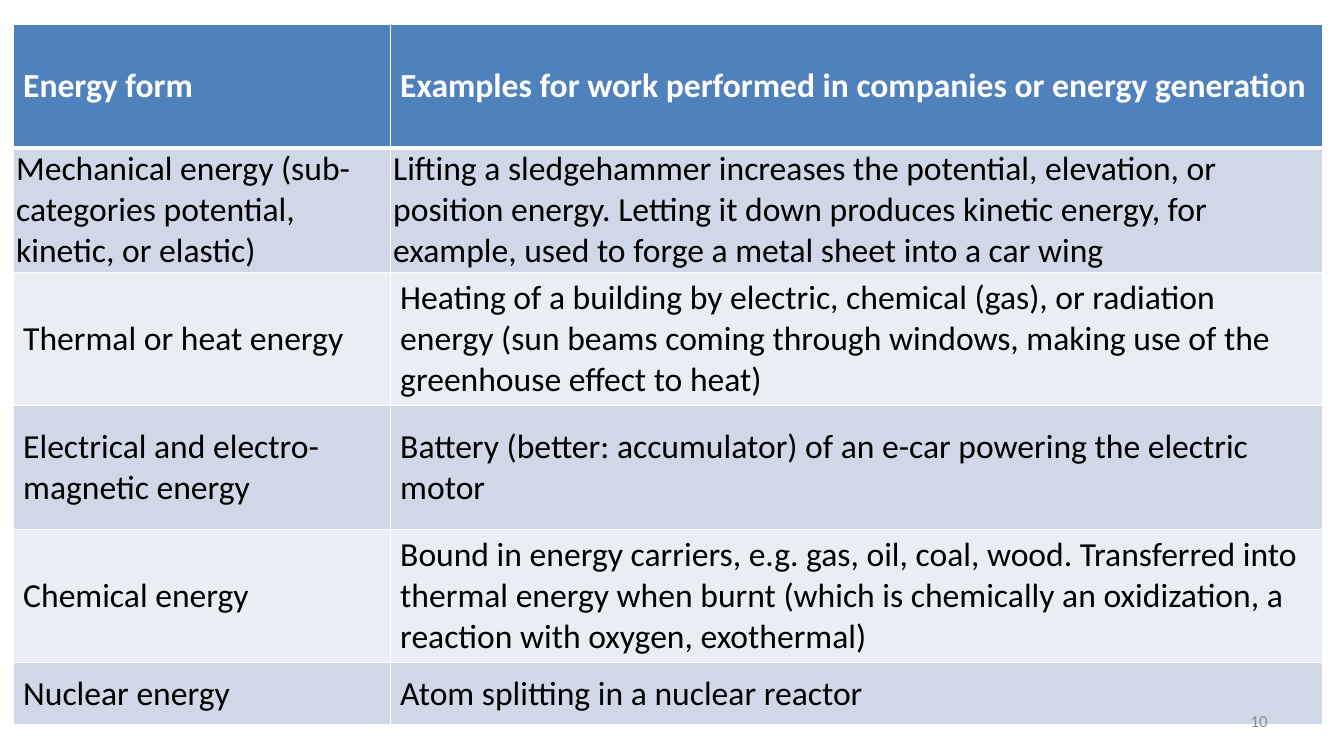
from dataclasses import dataclass

import pptx
import pptx.dml.color
import pptx.enum.text
import pptx.oxml
import pptx.oxml.ns
import pptx.util

Inches = pptx.util.Inches
Pt = pptx.util.Pt
RGBColor = pptx.dml.color.RGBColor
ANCHOR = pptx.enum.text.MSO_ANCHOR

FONT = "Calibri"
WHITE = RGBColor(0xFF, 0xFF, 0xFF)
BLACK = RGBColor(0, 0, 0)
GREY = RGBColor(0x8C, 0x8C, 0x8C)
HEADER_BLUE = RGBColor(0x4F, 0x81, 0xBD)
BAND_DARK = RGBColor(0xD0, 0xD8, 0xE8)
BAND_LIGHT = RGBColor(0xE9, 0xED, 0xF4)

COLUMN_WIDTHS = (3.74, 9.25)
THIN, THICK = 1, 3


@dataclass
class EnergyRow:
    form: str
    example: str
    height: float = 1.23
    tight: bool = False  # narrow margins, text at the top


ROWS = [
    EnergyRow("Energy form",
              "Examples for work performed in companies or energy generation"),
    EnergyRow("Mechanical energy (sub-categories potential, kinetic, or elastic)",
              "Lifting a sledgehammer increases the potential, elevation, or position "
              "energy. Letting it down produces kinetic energy, for example, used to "
              "forge a metal sheet into a car wing", tight=True),
    EnergyRow("Thermal or heat energy",
              "Heating of a building by electric, chemical (gas), or radiation energy "
              "(sun beams coming through windows, making use of the greenhouse effect "
              "to heat)"),
    EnergyRow("Electrical and electro-magnetic energy",
              "Battery (better: accumulator) of an e-car powering the electric motor"),
    EnergyRow("Chemical energy",
              "Bound in energy carriers, e.g. gas, oil, coal, wood. Transferred into "
              "thermal energy when burnt (which is chemically an oxidization, a "
              "reaction with oxygen, exothermal)"),
    EnergyRow("Nuclear energy", "Atom splitting in a nuclear reactor", height=0.62),
]


def format_run(r, size: float, color: RGBColor, bold: bool = False) -> None:
    r.font.name = FONT
    r.font.size = Pt(size)
    r.font.bold = bold
    r.font.color.rgb = color


def set_borders(cell, top: float, bottom: float) -> None:
    tc_pr = cell._tc.get_or_add_tcPr()
    for side, width in (("L", THIN), ("R", THIN), ("T", top), ("B", bottom)):
        tc_pr.append(pptx.oxml.parse_xml(
            f'<a:ln{side} {pptx.oxml.ns.nsdecls("a")} w="{Pt(width)}">'
            f'<a:solidFill><a:srgbClr val="{WHITE}"/></a:solidFill></a:ln{side}>'))


def fill_cell(cell, text: str, row: EnergyRow, index: int) -> None:
    header = index == 0
    set_borders(cell, THICK if index == 1 else THIN, THICK if header else THIN)
    cell.fill.solid()
    band = BAND_DARK if index % 2 else BAND_LIGHT
    cell.fill.fore_color.rgb = HEADER_BLUE if header else band
    cell.text_frame.text = text
    p = cell.text_frame.paragraphs[0]
    format_run(p.runs[0], 24, WHITE if header else BLACK, header)
    if row.tight:
        cell.vertical_anchor = ANCHOR.TOP
        cell.margin_left = cell.margin_right = Inches(0.03)
        cell.margin_top = cell.margin_bottom = 0
        p.space_after = Pt(10)
    else:
        cell.vertical_anchor = ANCHOR.MIDDLE


def add_energy_table(s) -> None:
    height = sum(row.height for row in ROWS)
    table = s.shapes.add_table(len(ROWS), len(COLUMN_WIDTHS), Inches(0.13), Inches(0.24),
                               Inches(sum(COLUMN_WIDTHS)), Inches(height)).table
    for column, width in zip(table.columns, COLUMN_WIDTHS):
        column.width = Inches(width)
    for i, row in enumerate(ROWS):
        table.rows[i].height = Inches(row.height)
        for j, text in enumerate((row.form, row.example)):
            fill_cell(table.cell(i, j), text, row, i)


def add_page_number(s, number: int) -> None:
    sp = s.shapes.add_textbox(Inches(9.56), Inches(6.95), Inches(3.11), Inches(0.4))
    tf = sp.text_frame
    tf.word_wrap = True
    tf.vertical_anchor = ANCHOR.MIDDLE
    tf.text = str(number)
    p = tf.paragraphs[0]
    p.alignment = pptx.enum.text.PP_ALIGN.RIGHT
    format_run(p.runs[0], 12, GREY)


def main() -> None:
    prs = pptx.Presentation()
    prs.slide_width, prs.slide_height = Inches(13.33), Inches(7.5)
    s = prs.slides.add_slide(prs.slide_layouts[6])

    # Table of energy forms
    add_energy_table(s)

    # Page number
    add_page_number(s, 10)

    prs.save("out.pptx")


if __name__ == "__main__":
    main()
